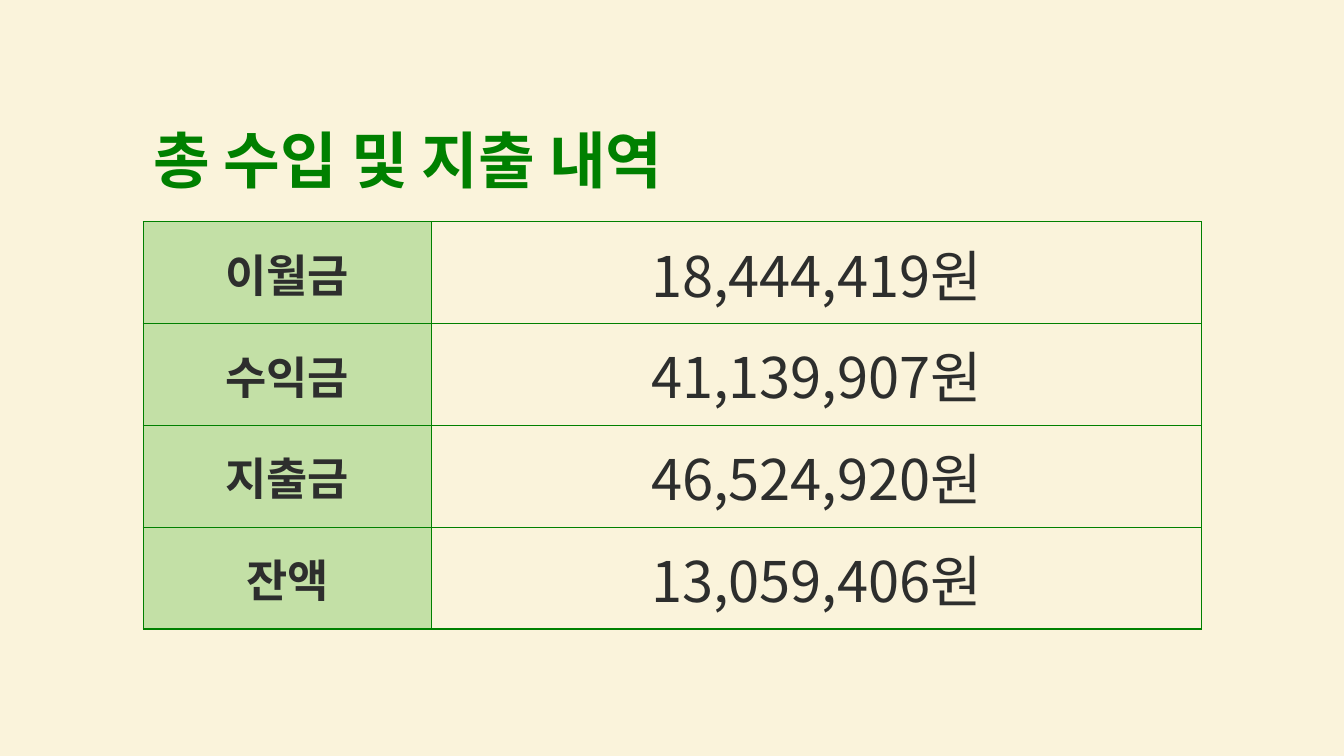
"""Build the slide with the table of total income and spending."""
from lxml import etree
from pptx import Presentation
from pptx import util as u
from pptx.dml.color import RGBColor
from pptx.enum import text
from pptx.oxml.ns import qn

THEME = {
    "font": "Noto Sans CJK KR",
    "background": "FAF3DB",
    "green": "008000",
    "label_fill": "C3E0A6",
    "ink": "2D2E2D",
    "title_size": 44,
    "label_size": 32,
    "amount_size": 40,
    "border_width": 1,
}
LEFT, WIDTH = 1.42, 10.5
LABEL_WIDTH, ROW_HEIGHT = 2.86, 1.01
BALANCES = [
    ("이월금", "18,444,419원"),
    ("수익금", "41,139,907원"),
    ("지출금", "46,524,920원"),
    ("잔액", "13,059,406원"),
]


def style_text(paragraph, size, color, bold):
    """Format the runs of a paragraph."""
    for run in paragraph.runs:
        run.font.size = u.Pt(size)
        run.font.bold = bold
        run.font.color.rgb = RGBColor.from_string(color)
        run.font.name = THEME["font"]
        properties = run.font._element
        etree.SubElement(properties, qn("a:ea"), typeface=THEME["font"])


def add_borders(cell):
    """Draw a line on all four sides of a cell."""
    properties = cell._tc.get_or_add_tcPr()
    for side in ("a:lnL", "a:lnR", "a:lnT", "a:lnB"):
        line = etree.SubElement(properties, qn(side), w=str(u.Pt(THEME["border_width"])))
        fill = etree.SubElement(line, qn("a:solidFill"))
        etree.SubElement(fill, qn("a:srgbClr"), val=THEME["green"])


presentation = Presentation()
presentation.slide_width = u.Inches(13.33)
presentation.slide_height = u.Inches(7.5)
slide = presentation.slides.add_slide(presentation.slide_layouts[6])
slide.background.fill.solid()
slide.background.fill.fore_color.rgb = RGBColor.from_string(THEME["background"])

title = slide.shapes.add_textbox(u.Inches(LEFT), u.Inches(0.75), u.Inches(WIDTH), u.Inches(1.25))
title.text_frame.word_wrap = True
title.text_frame.vertical_anchor = text.MSO_ANCHOR.BOTTOM
title.text_frame.text = "총 수입 및 지출 내역"
title.text_frame.paragraphs[0].line_spacing = 0.9
style_text(title.text_frame.paragraphs[0], THEME["title_size"], THEME["green"], True)

table = slide.shapes.add_table(
    len(BALANCES), 2, u.Inches(LEFT), u.Inches(2.2),
    u.Inches(WIDTH), u.Inches(ROW_HEIGHT * len(BALANCES)),
).table
table.first_row = False
table.horz_banding = False
table.columns[0].width = u.Inches(LABEL_WIDTH)
table.columns[1].width = u.Inches(WIDTH - LABEL_WIDTH)

for row, balance in enumerate(BALANCES):
    table.rows[row].height = u.Inches(ROW_HEIGHT)
    for column, wording in enumerate(balance):
        is_label = column == 0
        cell = table.cell(row, column)
        cell.vertical_anchor = text.MSO_ANCHOR.MIDDLE
        add_borders(cell)
        if is_label:
            cell.fill.solid()
            cell.fill.fore_color.rgb = RGBColor.from_string(THEME["label_fill"])
        else:
            cell.fill.background()
        cell.text_frame.text = wording
        paragraph = cell.text_frame.paragraphs[0]
        paragraph.alignment = text.PP_ALIGN.CENTER
        size = THEME["label_size" if is_label else "amount_size"]
        style_text(paragraph, size, THEME["ink"], is_label)

presentation.save("out.pptx")
